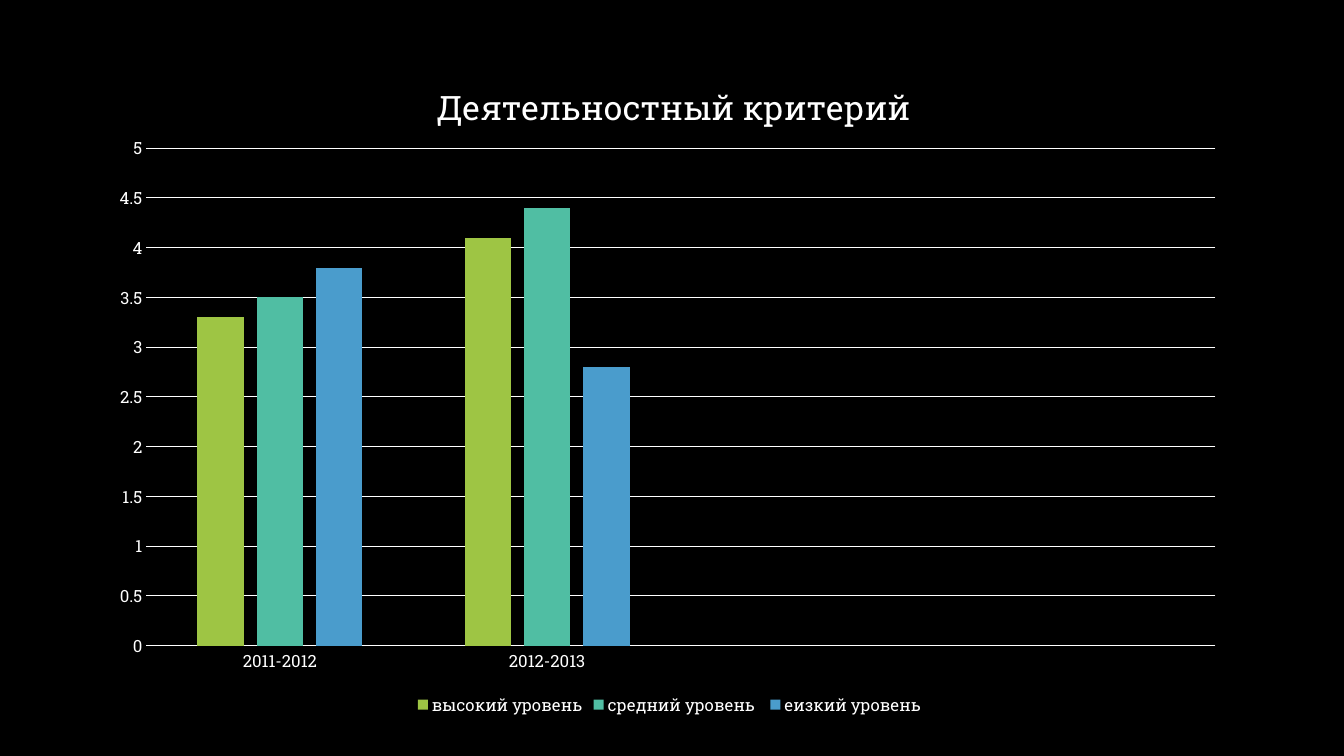
"""Build a slide with a clustered column chart of levels by school year."""
import pptx
import pptx.chart.data
import pptx.dml.color
import pptx.enum.chart
import pptx.oxml
import pptx.util
from pptx.util import Inches

FONT = "Roboto Slab"
WHITE = "FFFFFF"
BLACK = "000000"
TITLE = "Деятельностный критерий"
YEARS = ["2011-2012", "2012-2013", "", ""]
LEVELS = [
    ("высокий уровень", (3.3, 4.1, None, None), "9EC544"),
    ("средний уровень ", (3.5, 4.4, None, None), "50BEA3"),
    ("еизкий уровень", (3.8, 2.8, None, None), "4A9CCC"),
]
CHART_BOX = (1, 0.47, 11.28, 6.67)
TITLE_PLACE = {"xMode": "edge", "yMode": "edge", "x": 0.29, "y": 0.04}
PLOT_PLACE = {"layoutTarget": "inner", "xMode": "edge", "yMode": "edge",
              "x": 0.04, "y": 0.15, "w": 0.94, "h": 0.74}


def color(hex_code):
    return pptx.dml.color.RGBColor.from_string(hex_code)


def style_font(font, size):
    font.name = FONT
    font.size = pptx.util.Pt(size)
    font.bold = False
    font.color.rgb = color(WHITE)


def style_line(line):
    line.color.rgb = color(WHITE)
    line.width = pptx.util.Pt(0.75)


def place(parent, before, settings):
    for old in parent.findall(pptx.oxml.ns.qn("c:layout")):
        parent.remove(old)
    layout = pptx.oxml.parse_xml(
        f"<c:layout {pptx.oxml.ns.nsdecls('c')}><c:manualLayout>"
        + "".join(f'<c:{key} val="{value}"/>' for key, value in settings.items())
        + "</c:manualLayout></c:layout>")
    parent.find(pptx.oxml.ns.qn(before)).addprevious(layout)


def add_level_chart(page):
    data = pptx.chart.data.CategoryChartData()
    data.categories = YEARS
    for name, values, _ in LEVELS:
        data.add_series(name, values)
    chart = page.shapes.add_chart(
        pptx.enum.chart.XL_CHART_TYPE.COLUMN_CLUSTERED,
        *map(Inches, CHART_BOX), data).chart
    style_font(chart.font, 10)

    chart.has_title = True
    span = chart.chart_title.text_frame.paragraphs[0].add_run()
    span.text = TITLE
    style_font(span.font, 24)
    chart.chart_title.include_in_layout = False
    place(chart.chart_title._element, "c:overlay", TITLE_PLACE)

    plot = chart.plots[0]
    plot.gap_width = 219
    plot.overlap = -27
    plot.vary_by_categories = False
    place(plot._element.getparent(), "c:barChart", PLOT_PLACE)
    for series, (_, _, fill) in zip(plot.series, LEVELS):
        series.format.fill.solid()
        series.format.fill.fore_color.rgb = color(fill)
        series.invert_if_negative = False

    for axis in (chart.category_axis, chart.value_axis):
        axis.major_tick_mark = pptx.enum.chart.XL_TICK_MARK.NONE
        axis.minor_tick_mark = pptx.enum.chart.XL_TICK_MARK.NONE
        style_font(axis.tick_labels.font, 12)
    style_line(chart.category_axis.format.line)
    scale = chart.value_axis
    scale.minimum_scale, scale.maximum_scale, scale.major_unit = 0, 5, 0.5
    scale.format.line.fill.background()
    style_line(scale.major_gridlines.format.line)

    chart.has_legend = True
    chart.legend.position = pptx.enum.chart.XL_LEGEND_POSITION.BOTTOM
    chart.legend.include_in_layout = False
    style_font(chart.legend.font, 12)


def main():
    deck = pptx.Presentation()
    deck.slide_width, deck.slide_height = Inches(13.33), Inches(7.5)
    page = deck.slides.add_slide(deck.slide_layouts[6])
    page.background.fill.solid()
    page.background.fill.fore_color.rgb = color(BLACK)
    add_level_chart(page)
    deck.save("out.pptx")


if __name__ == "__main__":
    main()
